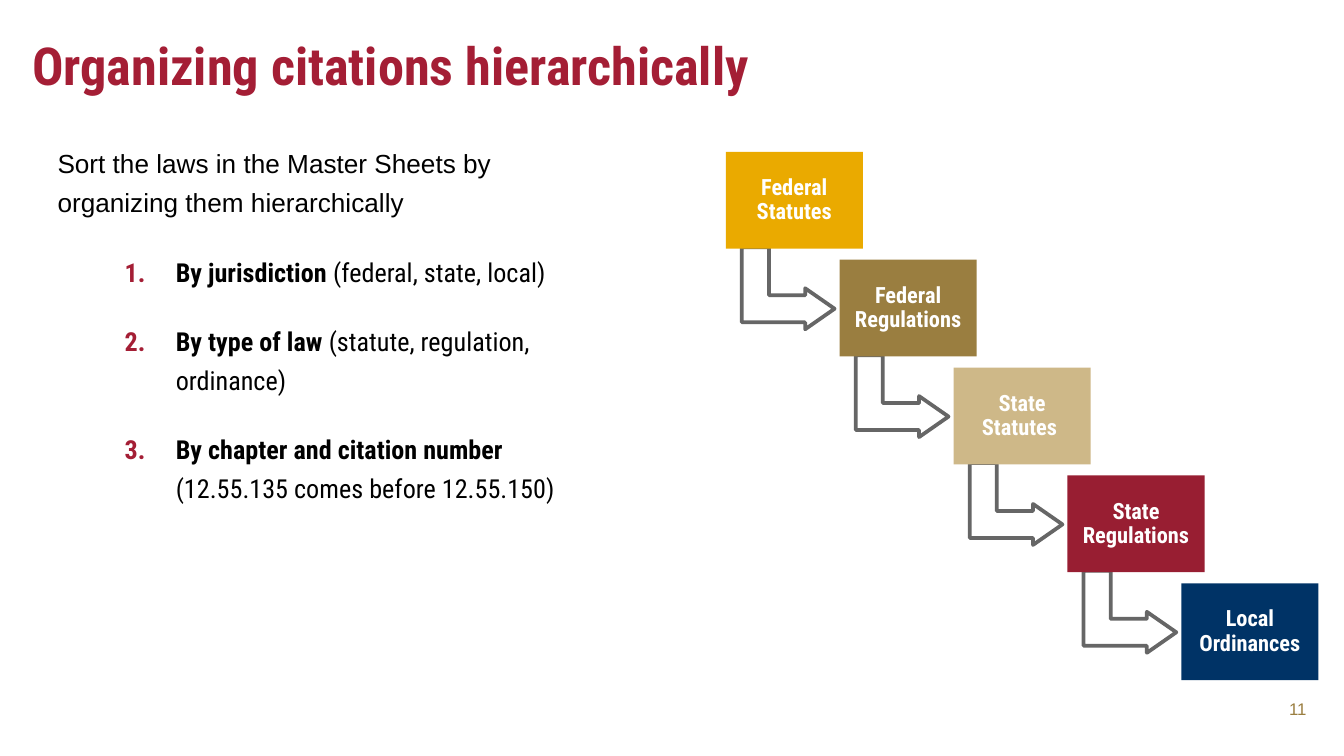
from lxml.etree import SubElement
from pptx import Presentation
from pptx.dml.color import RGBColor
from pptx.enum.shapes import MSO_SHAPE
from pptx.enum.text import MSO_ANCHOR, MSO_AUTO_SIZE, PP_ALIGN
from pptx.oxml.ns import qn
from pptx.util import Inches, Pt

WIDTH = 10
HEIGHT = WIDTH * 9 / 16
COLORS = {
    "crimson": "A41E35", "black": "000000", "white": "FFFFFF", "gray": "666666",
    "gold": "EAAA00", "bronze": "9A7E40", "sand": "CEB888", "wine": "981E32",
    "navy": "003366",
}
HEADING_FONT, PLAIN_FONT = "Roboto Condensed", "Arial"
LEVELS = [
    ("Federal Statutes", "gold"),
    ("Federal Regulations", "bronze"),
    ("State Statutes ", "sand"),
    ("State Regulations", "wine"),
    ("Local Ordinances", "navy"),
]
CRITERIA = [
    ("By jurisdiction ", "(federal, state, local)"),
    ("By type of law ", "(statute, regulation, ordinance)"),
    ("By chapter and citation number ", "(12.55.135 comes before 12.55.150)"),
]


def rgb(color):
    return RGBColor.from_string(COLORS[color])


def inches(box):
    return [Inches(length) for length in box]


def apply(target, values):
    for name, value in values.items():
        setattr(target, name, value)


def format_frame(frame, inset, anchor=MSO_ANCHOR.TOP):
    sides = ("left", "top", "right", "bottom")
    apply(frame, {f"margin_{side}": Inches(inset) for side in sides})
    apply(frame, {"word_wrap": True, "auto_size": MSO_AUTO_SIZE.NONE,
                  "vertical_anchor": anchor})


def add_run(paragraph, text, size, color, font=HEADING_FONT, bold=False):
    run = paragraph.add_run()
    run.text = text
    apply(run.font, {"size": Pt(size), "name": font, "bold": bold})
    run.font.color.rgb = rgb(color)


def number_paragraph(paragraph, indent, hanging, color):
    """Give the paragraph a coloured automatic number with a hanging indent."""
    properties = paragraph._p.get_or_add_pPr()
    properties.set("marL", str(Inches(indent)))
    properties.set("indent", str(-Inches(hanging)))
    bullet_color = SubElement(properties, qn("a:buClr"))
    SubElement(bullet_color, qn("a:srgbClr"), val=COLORS[color])
    SubElement(properties, qn("a:buFont"), typeface=HEADING_FONT)
    SubElement(properties, qn("a:buAutoNum"), type="arabicPeriod")


def place_title(slide, box):
    title = slide.shapes.title
    apply(title, dict(zip(("left", "top", "width", "height"), inches(box))))
    format_frame(title.text_frame, 0.1)
    heading = title.text_frame.paragraphs[0]
    apply(heading, {"alignment": PP_ALIGN.LEFT, "line_spacing": 1.0})
    add_run(heading, "Organizing citations hierarchically", 28, "crimson", bold=True)


def add_instructions(slide, box):
    frame = slide.shapes.add_textbox(*inches(box)).text_frame
    format_frame(frame, 0.1)
    intro = frame.paragraphs[0]
    intro.line_spacing = 1.25
    intro._p.get_or_add_pPr().set("marL", str(Inches(0.15)))
    add_run(intro, "Sort the laws in the Master Sheets by organizing them hierarchically",
            14, "black", PLAIN_FONT)
    for criterion, detail in CRITERIA:
        item = frame.add_paragraph()
        apply(item, {"level": 1, "line_spacing": 1.25, "space_before": Pt(16)})
        number_paragraph(item, 1.03, 0.38, "crimson")
        add_run(item, criterion, 14, "black", bold=True)
        add_run(item, detail, 14, "black")


def add_step_arrow(slide, box):
    arrow = slide.shapes.add_shape(MSO_SHAPE.BENT_UP_ARROW, *inches(box))
    arrow.rotation = 90
    for index, share in enumerate((0.33, 0.25, 0.36)):
        arrow.adjustments[index] = share
    arrow.shadow.inherit = False
    arrow.fill.background()
    arrow.line.color.rgb = rgb("gray")
    arrow.line.width = Pt(2)


def add_level(slide, box, label, color):
    level = slide.shapes.add_shape(MSO_SHAPE.RECTANGLE, *inches(box))
    level.shadow.inherit = False
    level.fill.solid()
    level.fill.fore_color.rgb = rgb(color)
    level.line.fill.background()
    format_frame(level.text_frame, 0.05, MSO_ANCHOR.MIDDLE)
    caption = level.text_frame.paragraphs[0]
    apply(caption, {"alignment": PP_ALIGN.CENTER, "line_spacing": 0.9})
    add_run(caption, label, 12, "white", bold=True)


def add_staircase(slide, box):
    """Step the levels evenly from the box's top left to its bottom right."""
    left, top, width, height = box
    level_width, level_height = 1.02, 0.72
    last = len(LEVELS) - 1
    step_x = (width - level_width) / last
    step_y = (height - level_height) / last
    for index, (label, color) in enumerate(LEVELS):
        x, y = left + index * step_x, top + index * step_y
        if index < last:
            add_step_arrow(slide, (x + 0.16, y + 0.67, 0.61, 0.69))
        add_level(slide, (x, y, level_width, level_height), label, color)


def add_page_number(slide, box):
    frame = slide.shapes.add_textbox(*inches(box)).text_frame
    format_frame(frame, 0.1, MSO_ANCHOR.MIDDLE)
    frame.paragraphs[0].alignment = PP_ALIGN.RIGHT
    add_run(frame.paragraphs[0], "11", 9, "bronze", PLAIN_FONT)


def main():
    deck = Presentation()
    deck.slide_width, deck.slide_height = inches((WIDTH, HEIGHT))
    slide = deck.slides.add_slide(deck.slide_layouts.get_by_name("Title Only"))
    place_title(slide, (0.14, 0.15, 9.16, 0.63))
    add_instructions(slide, (0.18, 0.94, 4.37, 4.02))
    add_staircase(slide, (5.4, 1.13, 4.41, 3.93))
    add_page_number(slide, (9.38, 5.09, 0.44, 0.37))
    deck.save("out.pptx")


if __name__ == "__main__":
    main()
